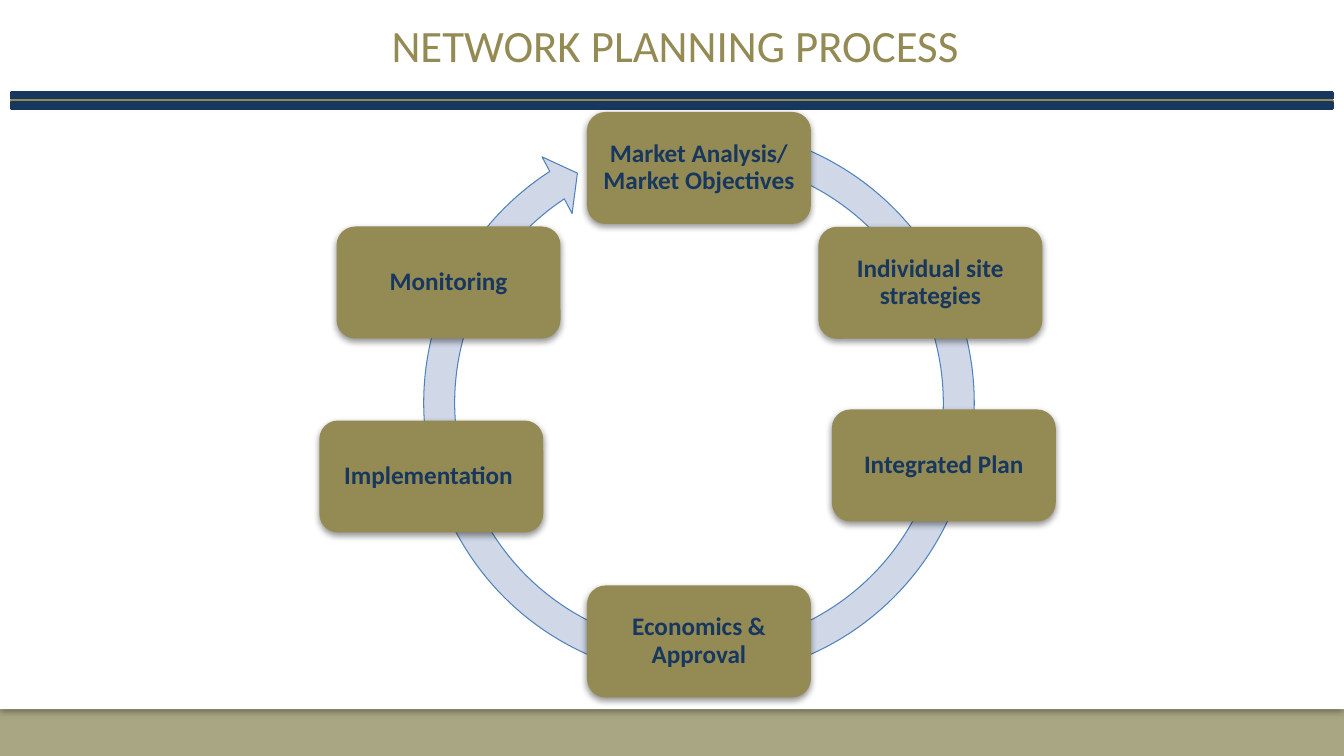
from dataclasses import dataclass
from lxml import etree
from pptx import Presentation
from pptx.dml.color import RGBColor
from pptx.enum.shapes import MSO_SHAPE
from pptx.enum.text import MSO_ANCHOR, PP_ALIGN
from pptx.oxml.ns import qn
from pptx.util import Pt

RECTANGLE = MSO_SHAPE.RECTANGLE
ROUNDED = MSO_SHAPE.ROUNDED_RECTANGLE
CIRCULAR_ARROW = MSO_SHAPE.CIRCULAR_ARROW
MIDDLE = MSO_ANCHOR.MIDDLE
CENTER = PP_ALIGN.CENTER

TITLE = "NETWORK PLANNING PROCESS"
STEPS = [
    ("Market Analysis/ Market Objectives", 419.3, 80),
    ("Individual site strategies", 584.6, 162),
    ("Integrated Plan", 594.2, 292.5),
    ("Economics & Approval", 419.3, 418.2),
    ("Implementation ", 228.1, 300.4),
    ("Monitoring", 240.4, 161.8),
]


@dataclass(frozen=True)
class Theme:
    font: str = "Calibri"
    title_size: float = 32
    step_size: float = 18
    olive: str = "948A54"
    navy: str = "17375E"
    footer: str = "A9A684"
    panel: str = "FFFFFF"
    ring_fill: str = "D0D8E8"
    ring_line: str = "4F81BD"


THEME = Theme()
SLIDE_SIZE = (960, 540)
PANEL_HEIGHT = 506.5
TITLE_BOX = (161.3, 3.6, 642.2, 56.2)
STEP_SIZE = (160, 80)
RING_SIZE = 417
RING_TOP = 79.2
RING_ADJUSTMENTS = (0.053, 3.126, 142.128, 171.36, 0.055)
BAR_LEFT, BAR_WIDTH = 7.9, 944
BARS = [
    (66.2, 4.3, THEME.navy),
    (72, 2.9, THEME.olive),
    (73.4, 4.3, THEME.navy),
]


def color(value):
    return RGBColor.from_string(value)


def add_shadow(shape):
    effects = shape._element.spPr.find(qn("a:effectLst"))
    shadow = etree.SubElement(
        effects, qn("a:outerShdw"), blurRad=str(Pt(5)), dist=str(Pt(2)),
        dir="5400000", algn="t", rotWithShape="0")
    tint = etree.SubElement(shadow, qn("a:srgbClr"), val="000000")
    etree.SubElement(tint, qn("a:alpha"), val="43000")


def add_block(slide, kind, bounds, fill, line=None, line_width=0, shadow=False):
    shape = slide.shapes.add_shape(kind, *map(Pt, bounds))
    shape.shadow.inherit = False
    shape.fill.solid()
    shape.fill.fore_color.rgb = color(fill)
    if line:
        shape.line.color.rgb = color(line)
        shape.line.width = Pt(line_width)
    else:
        shape.line.fill.background()
    if shadow:
        add_shadow(shape)
    return shape


def write_text(shape, text, *, size, ink, bold=False, inset=5, spacing=1.0, after=0):
    frame = shape.text_frame
    frame.word_wrap = True
    frame.vertical_anchor = MIDDLE
    frame.margin_left = frame.margin_right = Pt(inset)
    frame.margin_top = frame.margin_bottom = Pt(inset)
    para = frame.paragraphs[0]
    para.alignment = CENTER
    para.line_spacing = spacing
    para.space_after = Pt(after)
    span = para.add_run()
    span.text = text
    span.font.name = THEME.font
    span.font.size = Pt(size)
    span.font.bold = bold
    span.font.color.rgb = color(ink)


def add_title(slide):
    title = slide.shapes.title
    title.left, title.top, title.width, title.height = map(Pt, TITLE_BOX)
    write_text(title, TITLE, size=THEME.title_size, ink=THEME.olive)


def add_frame(slide):
    slide.background.fill.solid()
    slide.background.fill.fore_color.rgb = color(THEME.footer)
    panel = add_block(slide, RECTANGLE, (0, 0, SLIDE_SIZE[0], PANEL_HEIGHT),
                      THEME.panel, shadow=True)
    slide.shapes.title._element.addprevious(panel._element)
    for top, height, tone in BARS:
        add_block(slide, RECTANGLE, (BAR_LEFT, top, BAR_WIDTH, height),
                  tone, line=tone, line_width=2)


def add_cycle(slide):
    ring_left = STEPS[0][1] + (STEP_SIZE[0] - RING_SIZE) / 2
    ring = add_block(slide, CIRCULAR_ARROW,
                     (ring_left, RING_TOP, RING_SIZE, RING_SIZE),
                     THEME.ring_fill, line=THEME.ring_line, line_width=0.75)
    for index, value in enumerate(RING_ADJUSTMENTS):
        ring.adjustments[index] = value
    for label, left, top in STEPS:
        box = add_block(slide, ROUNDED, (left, top, *STEP_SIZE),
                        THEME.olive, shadow=True)
        write_text(box, label, size=THEME.step_size, ink=THEME.navy,
                   bold=True, spacing=0.9, after=6.3)


def main():
    deck = Presentation()
    deck.slide_width, deck.slide_height = map(Pt, SLIDE_SIZE)
    page = deck.slides.add_slide(deck.slide_layouts[5])
    add_frame(page)
    add_title(page)
    add_cycle(page)
    deck.save("out.pptx")


if __name__ == "__main__":
    main()
